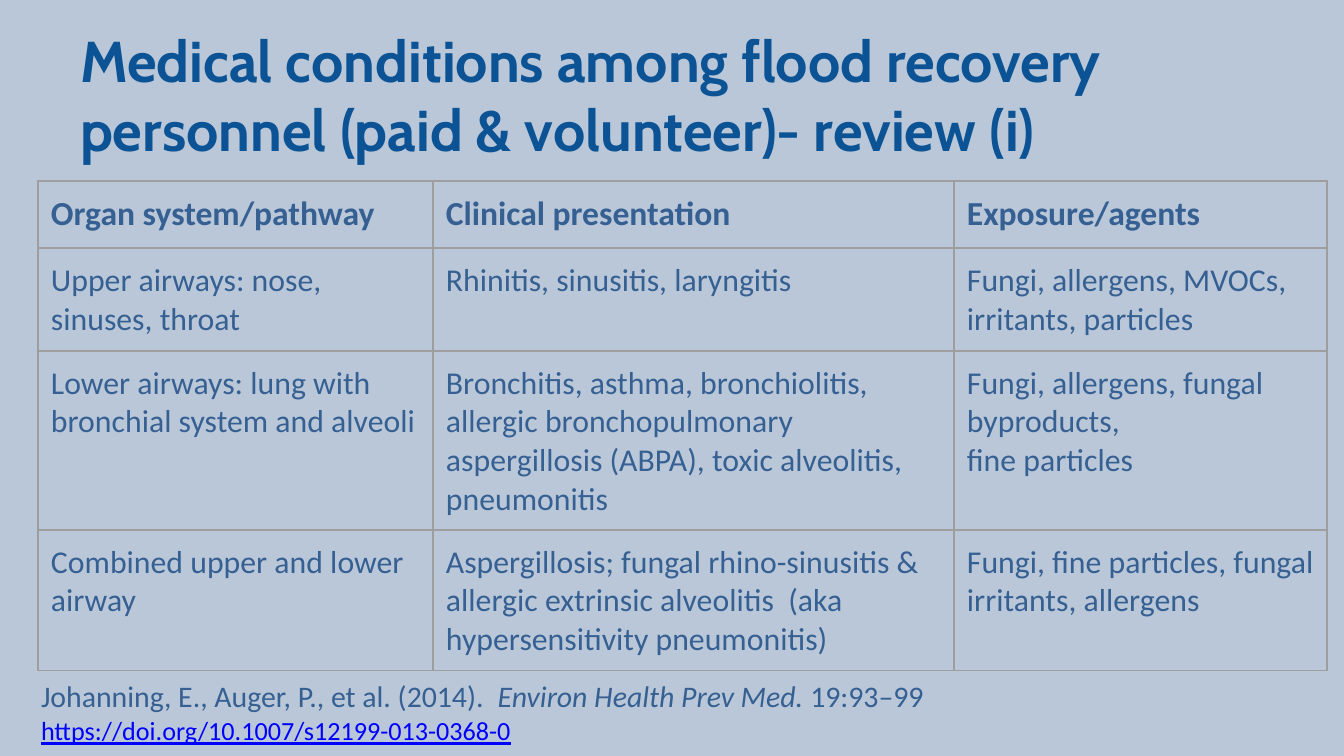
from lxml.etree import SubElement
from pptx import Presentation
from pptx.dml.color import RGBColor
from pptx.enum.text import MSO_ANCHOR as Anchor
from pptx.oxml.ns import qn
from pptx.util import Emu, Pt

PX = 914400 / 134.4
BLUE = "366092"
HEADERS = ["Organ system/pathway", "Clinical presentation", "Exposure/agents"]
CONDITIONS = [
    ["Upper airways: nose, sinuses, throat",
     "Rhinitis, sinusitis, laryngitis",
     "Fungi, allergens, MVOCs, irritants, particles"],
    ["Lower airways: lung with bronchial system and alveoli",
     "Bronchitis, asthma, bronchiolitis, allergic bronchopulmonary "
     "aspergillosis (ABPA), toxic alveolitis, pneumonitis",
     "Fungi, allergens, fungal byproducts,\nfine particles"],
    ["Combined upper and lower airway",
     "Aspergillosis; fungal rhino-sinusitis & allergic extrinsic alveolitis  "
     "(aka hypersensitivity pneumonitis)",
     "Fungi, fine particles, fungal irritants, allergens"],
]
COLUMN_WIDTHS = [395, 521, 373]
ROW_HEIGHTS = [67, 103, 179, 141]


def px(length):
    return Emu(round(length * PX))


def color(hex_string):
    return RGBColor.from_string(hex_string)


def add_span(para, text, size=17, font="Calibri", fill=BLUE,
             bold=False, italic=False, underline=False):
    span = para.add_run()
    span.text = text
    style = span.font
    style.size, style.name = Pt(size), font
    style.bold, style.italic, style.underline = bold, italic, underline
    style.color.rgb = color(fill)


def add_box(page, left, top, width, height, inset, anchor=Anchor.TOP):
    frame = page.shapes.add_textbox(
        px(left), px(top), px(width), px(height)).text_frame
    frame.word_wrap = True
    frame.vertical_anchor = anchor
    frame.margin_left = frame.margin_right = px(13)
    frame.margin_top = frame.margin_bottom = px(inset)
    return frame


def add_borders(cell, hex_string="9E9E9E", width=0.75):
    properties = cell._tc.get_or_add_tcPr()
    for side in ("a:lnL", "a:lnR", "a:lnT", "a:lnB"):
        line = SubElement(properties, qn(side), w=str(Pt(width)))
        fill = SubElement(line, qn("a:solidFill"))
        SubElement(fill, qn("a:srgbClr"), val=hex_string)


def fill_cell(cell, text, **style):
    cell.margin_left = cell.margin_right = px(13)
    cell.margin_top = cell.margin_bottom = px(13)
    add_borders(cell)
    cell.fill.background()
    frame = cell.text_frame
    for index, line in enumerate(text.split("\n")):
        para = frame.add_paragraph() if index else frame.paragraphs[0]
        add_span(para, line, **style)


def add_conditions_table(page, left, top):
    rows = [HEADERS] + CONDITIONS
    table = page.shapes.add_table(
        len(rows), len(HEADERS), px(left), px(top),
        px(sum(COLUMN_WIDTHS)), px(sum(ROW_HEIGHTS))).table
    table.first_row = table.horz_banding = False
    for column, width in zip(table.columns, COLUMN_WIDTHS):
        column.width = px(width)
    for row, height, texts in zip(table.rows, ROW_HEIGHTS, rows):
        row.height = px(height)
        is_header = texts is HEADERS
        for cell, text in zip(row.cells, texts):
            fill_cell(cell, text, size=18 if is_header else 17, bold=is_header)


def add_title(page):
    frame = add_box(page, 67, 31, 1247, 126, inset=7, anchor=Anchor.MIDDLE)
    add_span(frame.paragraphs[0],
             "Medical conditions among flood recovery personnel "
             "(paid & volunteer)- review (i)",
             size=30.8, font="Cabin", fill="0B5394", bold=True)


def add_citation(page):
    frame = add_box(page, 28, 661, 1278, 99, inset=13)
    para = frame.paragraphs[0]
    add_span(para, "Johanning, E., Auger, P., et al. (2014).  ", size=16)
    add_span(para, "Environ Health Prev Med. ", size=16, italic=True)
    add_span(para, "19:93–99", size=16)
    add_span(para, " ", size=18)
    add_span(frame.add_paragraph(), "https://doi.org/10.1007/s12199-013-0368-0",
             size=14, fill="0000FF", underline=True)


def main():
    deck = Presentation()
    deck.slide_width, deck.slide_height = px(1344), px(756)
    page = deck.slides.add_slide(deck.slide_layouts[6])
    page.background.fill.solid()
    page.background.fill.fore_color.rgb = color("B9C7D9")
    add_title(page)
    add_citation(page)
    add_conditions_table(page, 38, 181)
    deck.save("out.pptx")


if __name__ == "__main__":
    main()
